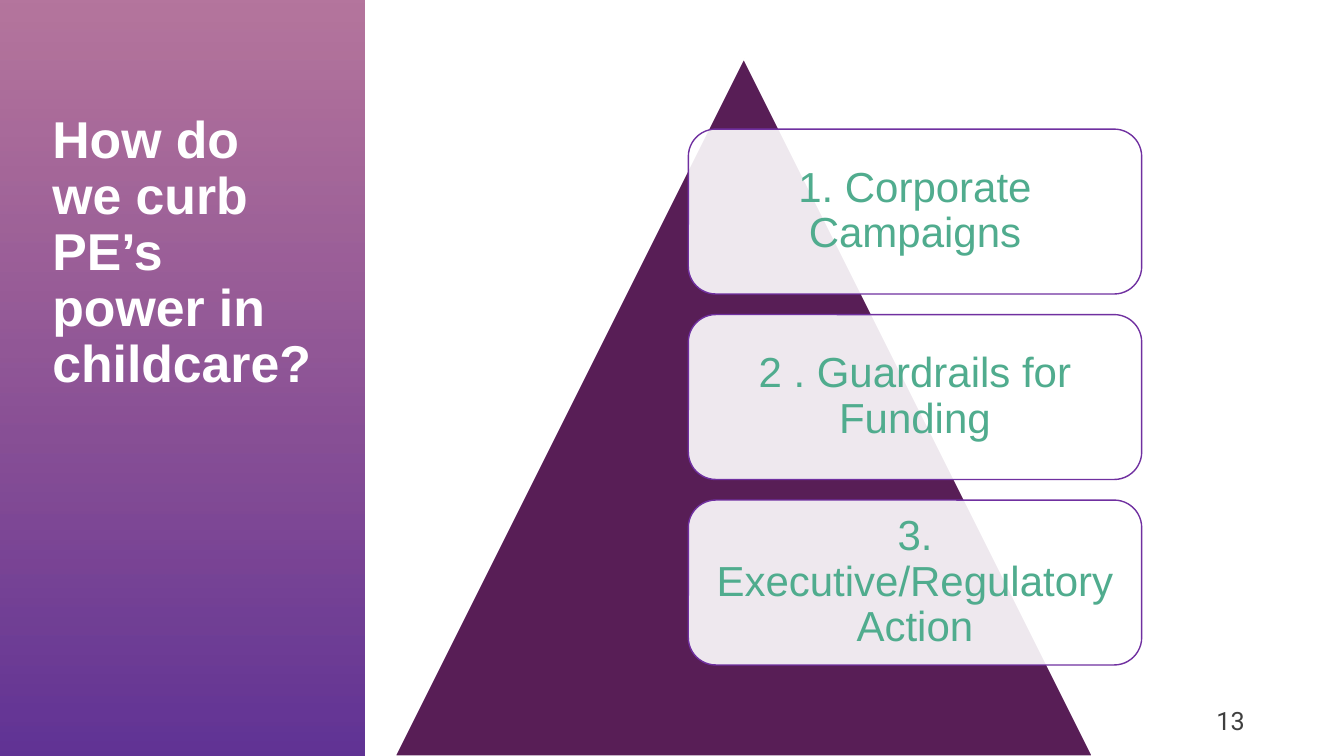
from collections import namedtuple
from dataclasses import dataclass

from lxml import etree
from pptx import Presentation
from pptx.dml.color import RGBColor
from pptx.enum import shapes, text
from pptx.oxml.ns import qn
from pptx.util import Pt

Box = namedtuple("Box", "left top width height")


@dataclass(frozen=True)
class Theme:
    """Colours, fonts and type sizes of the slide."""
    white: str = "FFFFFF"
    panel_bottom: str = "613395"
    panel_top: str = "933872"
    pyramid: str = "581E56"
    outline: str = "7030A0"
    step: str = "50AC8E"
    number: str = "3F3F3F"
    font: str = "Arial"
    number_font: str = "Roboto"
    title_size: float = 37
    step_size: float = 30
    number_size: float = 18


THEME = Theme()
STEPS = ["1. Corporate Campaigns", "2 . Guardrails for Funding",
         "3. Executive/Regulatory Action"]


def points(box):
    """Return the four lengths of a box in points."""
    return [Pt(length) for length in box]


def add_plain_shape(slide, kind, box):
    """Add a preset shape without a shadow."""
    shape = slide.shapes.add_shape(kind, *points(box))
    shape.shadow.inherit = False
    return shape


def set_opacity(shape, percent):
    """Set the opacity of the last fill colour of a shape."""
    colours = shape._element.spPr.xpath("./a:solidFill/a:srgbClr | ./a:gradFill//a:srgbClr")
    etree.SubElement(colours[-1], qn("a:alpha")).set("val", str(percent * 1000))


def write(shape, words, font, size, colour, bold=False, align=None, spacing=None):
    """Put one formatted paragraph into a shape."""
    frame = shape.text_frame
    frame.text = words
    frame.word_wrap = True
    para = frame.paragraphs[0]
    para.alignment = align
    para.line_spacing = spacing
    span = para.runs[0].font
    span.name, span.size, span.bold = font, Pt(size), bold
    span.color.rgb = RGBColor.from_string(colour)


def add_title_panel(slide, box, words):
    """Draw the gradient side panel and place the title on it."""
    panel = add_plain_shape(slide, shapes.MSO_SHAPE.RECTANGLE, box)
    panel.fill.gradient()
    panel.fill.gradient_angle = 90
    for stop, colour, position in zip(panel.fill.gradient_stops,
                                      (THEME.panel_bottom, THEME.panel_top), (0, 1)):
        stop.color.rgb = RGBColor.from_string(colour)
        stop.position = position
    set_opacity(panel, 69)
    panel.line.fill.background()
    title = slide.shapes.title
    panel._element.addnext(title._element)
    title.left, title.top, title.width, title.height = points(
        Box(box.left + 30.2, box.top + 77.8, 203, 295.2))
    write(title, words, THEME.font, THEME.title_size, THEME.white, True,
          text.PP_ALIGN.LEFT, 0.9)
    title.text_frame.vertical_anchor = text.MSO_ANCHOR.TOP
    title.text_frame.auto_size = text.MSO_AUTO_SIZE.NONE


def add_step(slide, box, words):
    """Draw one translucent rounded card with its text."""
    card = add_plain_shape(slide, shapes.MSO_SHAPE.ROUNDED_RECTANGLE, box)
    card.fill.solid()
    card.fill.fore_color.rgb = RGBColor.from_string(THEME.white)
    set_opacity(card, 90)
    card.line.color.rgb = RGBColor.from_string(THEME.outline)
    card.line.width = Pt(1)
    write(card, words, THEME.font, THEME.step_size, THEME.step,
          align=text.PP_ALIGN.CENTER, spacing=0.9)
    frame = card.text_frame
    frame.vertical_anchor = text.MSO_ANCHOR.MIDDLE
    frame.margin_left = frame.margin_right = Pt(8.6)
    frame.margin_top = frame.margin_bottom = Pt(8.6)


def add_pyramid(slide, box, steps):
    """Draw the pyramid and stack the step cards over its right half."""
    pyramid = add_plain_shape(slide, shapes.MSO_SHAPE.ISOSCELES_TRIANGLE, box)
    pyramid.fill.solid()
    pyramid.fill.fore_color.rgb = RGBColor.from_string(THEME.pyramid)
    pyramid.line.color.rgb = RGBColor.from_string(THEME.white)
    pyramid.line.width = Pt(1)
    pitch = 132.5
    for index, words in enumerate(steps):
        add_step(slide, Box(box.left + 209.5, box.top + 50.4 + index * pitch,
                            box.width * 0.65, pitch * 8 / 9), words)


def add_page_number(slide, box, number):
    """Write the page number."""
    write(slide.shapes.add_textbox(*points(box)), number, THEME.number_font,
          THEME.number_size, THEME.number)


def main():
    """Build the slide and save the deck."""
    deck = Presentation()
    deck.slide_width, deck.slide_height = Pt(960), Pt(540)
    slide = deck.slides.add_slide(deck.slide_layouts[5])
    add_title_panel(slide, Box(0, 0, 260.6, 540), "How do we curb PE’s power in childcare?")
    add_pyramid(slide, Box(282.2, 41.8, 498.2, 498.2), STEPS)
    add_page_number(slide, Box(861.8, 500.4, 36, 28.8), "13")
    deck.save("out.pptx")


if __name__ == "__main__":
    main()
